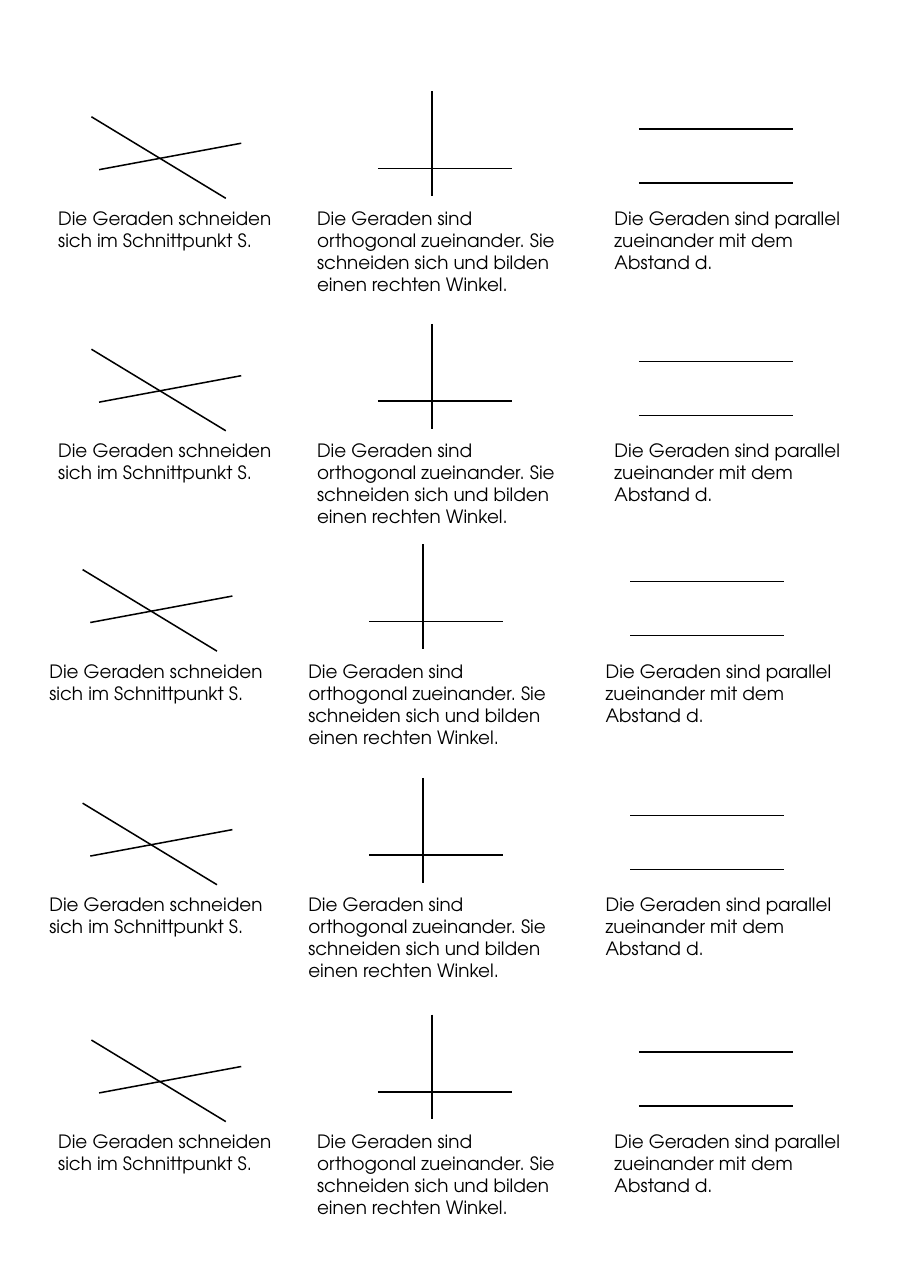
from pptx import Presentation
from pptx.dml.color import RGBColor
from pptx.enum.shapes import MSO_CONNECTOR
from pptx.enum.text import MSO_AUTO_SIZE
from pptx.util import Inches, Pt
from lxml import etree

STRAIGHT = MSO_CONNECTOR.STRAIGHT
GROW = MSO_AUTO_SIZE.SHAPE_TO_FIT_TEXT
NS = "http://schemas.openxmlformats.org/drawingml/2006/main"
THEME = {"font": "TeX Gyre Adventor", "size": 12, "ink": RGBColor(0, 0, 0), "line": 1}

# Rows of the grid: left edge and top of the captions
ROWS = [(0.43, 1.83), (0.43, 3.94), (0.35, 5.94), (0.35, 8.06), (0.43, 10.21)]

# Columns: offset, width and height of the caption, its text,
# and lines (x1, y1, x2, y2) measured from the caption's top left corner
COLS = [
    (0, 2.42, 0.5, "Die Geraden schneiden sich im Schnittpunkt S.",
     [(0.4, -0.77, 1.62, -0.03), (1.76, -0.53, 0.47, -0.29)]),
    (2.35, 2.52, 0.91, "Die Geraden sind orthogonal zueinander. "
     "Sie schneiden sich und bilden einen rechten Winkel.",
     [(0.65, -0.3, 1.87, -0.3), (1.14, -1, 1.14, -0.05)]),
    (5.05, 2.52, 0.71, "Die Geraden sind parallel zueinander mit dem Abstand d.",
     [(0.32, -0.66, 1.72, -0.66), (0.32, -0.17, 1.72, -0.17)]),
]


def write(shapes, text, *, x, y, w, h, size=THEME["size"], ink=THEME["ink"]):
    box = shapes.add_textbox(Inches(x), Inches(y), Inches(w), Inches(h))
    frame = box.text_frame
    frame.word_wrap = True
    frame.auto_size = GROW
    run = frame.paragraphs[0].add_run()
    run.text = text
    run.font.name = THEME["font"]
    run.font.size = Pt(size)
    run.font.color.rgb = ink


def draw(shapes, x1, y1, x2, y2):
    line = shapes.add_connector(STRAIGHT, Inches(x1), Inches(y1), Inches(x2), Inches(y2))
    line.line.color.rgb = THEME["ink"]
    line.line.width = Pt(THEME["line"])
    etree.SubElement(line._element.spPr, f"{{{NS}}}effectLst")


deck = Presentation()
deck.slide_width, deck.slide_height = Inches(8.27), Inches(11.69)
slide = deck.slides.add_slide(deck.slide_layouts[6])

# One group per row: sketches first, captions on top
for left, top in ROWS:
    shapes = slide.shapes.add_group_shape().shapes
    for dx, wide, high, text, lines in COLS:
        x = left + dx
        for x1, y1, x2, y2 in lines:
            draw(shapes, x + x1, top + y1, x + x2, top + y2)
    for dx, wide, high, text, lines in COLS:
        write(shapes, text, x=left + dx, y=top, w=wide, h=high)

deck.save("out.pptx")
